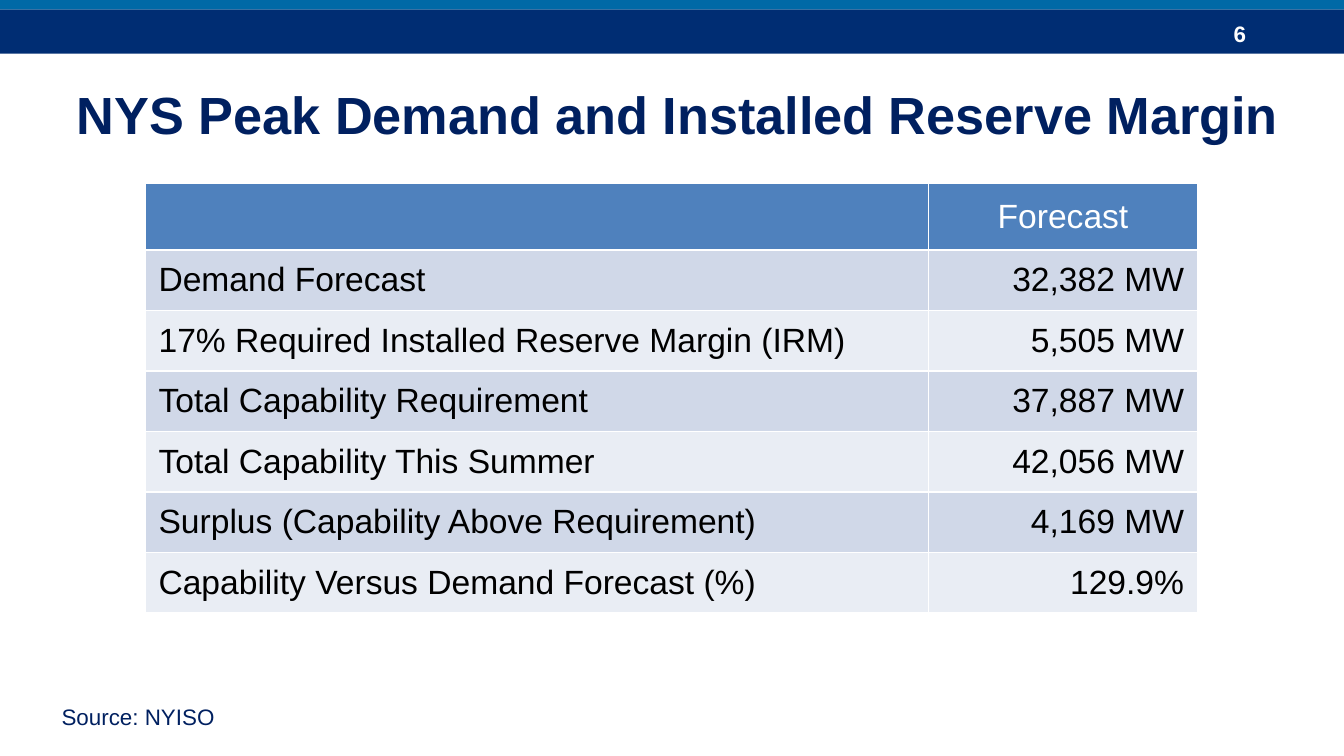
from lxml import etree
from pptx import Presentation, util as u
from pptx.dml.color import RGBColor
from pptx.enum import shapes, text
from pptx.oxml.ns import qn

INK = {"navy": "002D73", "blue": "0069A6", "title": "002060", "head": "4F81BD",
       "odd": "D0D8E8", "even": "E9EDF4", "white": "FFFFFF", "black": "000000"}
LEFT, MID, RIGHT = text.PP_ALIGN.LEFT, text.PP_ALIGN.CENTER, text.PP_ALIGN.RIGHT


def write(frame, words, size=18, ink="black", bold=False, align=LEFT):
    para = frame.paragraphs[0]
    para.alignment = align
    run = para.add_run()
    run.text = words
    font = run.font
    font.name, font.size, font.bold = "Arial", u.Pt(size), bold
    font.color.rgb = RGBColor.from_string(INK[ink])


def edge(cell, side):
    line = etree.SubElement(cell._tc.get_or_add_tcPr(), qn("a:" + side), w=str(u.Pt(1)))
    fill = etree.SubElement(line, qn("a:solidFill"))
    etree.SubElement(fill, qn("a:srgbClr"), val=INK["white"])


deck = Presentation()
deck.slide_width = u.Inches(10)
deck.slide_height = deck.slide_width * 9 // 16
slide = deck.slides.add_slide(deck.slide_layouts[6])

for top, high, ink in [(0.07, 0.33, "navy"), (-0.02, 0.09, "blue")]:
    bar = slide.shapes.add_shape(shapes.MSO_SHAPE.RECTANGLE, 0, u.Inches(top),
                                 deck.slide_width, u.Inches(high))
    bar.shadow.inherit = False
    bar.fill.solid()
    bar.fill.fore_color.rgb = RGBColor.from_string(INK[ink])
    bar.line.fill.background()

labels = [
    ((9.08, 0.1, 0.75, 0.3), "6", True, "MIDDLE",
     dict(size=12, ink="white", bold=True)),
    ((0.25, 0.56, 9.58, 0.77), "NYS Peak Demand and Installed Reserve Margin", True, "TOP",
     dict(size=28, ink="title", bold=True, align=MID)),
    ((0.36, 5.18, 1.35, 0.3), "Source: NYISO", False, "TOP",
     dict(size=12, ink="title")),
]
for place, words, wrap, anchor, style in labels:
    frame = slide.shapes.add_textbox(*map(u.Inches, place)).text_frame
    frame.word_wrap = wrap
    frame.vertical_anchor = text.MSO_ANCHOR[anchor]
    write(frame, words, **style)

rows = [
    ("", "Forecast"),
    ("Demand Forecast", "32,382 MW"),
    ("17% Required Installed Reserve Margin (IRM)", "5,505 MW"),
    ("Total Capability Requirement", "37,887 MW"),
    ("Total Capability This Summer", "42,056 MW"),
    ("Surplus (Capability Above Requirement)", "4,169 MW"),
    ("Capability Versus Demand Forecast (%)", "129.9%"),
]
grid = slide.shapes.add_table(len(rows), 2, u.Inches(1.08), u.Inches(1.36),
                              u.Inches(7.83), u.Inches(3.2)).table
for col, wide in zip(grid.columns, (5.83, 2)):
    col.width = u.Inches(wide)

for r, row in enumerate(rows):
    head = r == 0
    grid.rows[r].height = u.Inches(0.5 if head else 0.45)
    for c, words in enumerate(row):
        cell = grid.cell(r, c)
        cell.vertical_anchor = text.MSO_ANCHOR.MIDDLE
        cell.margin_left = cell.margin_right = u.Inches(0.1)
        cell.margin_top = cell.margin_bottom = u.Inches(0.04)
        for side in ("lnL", "lnR", "lnT", "lnB"):
            edge(cell, side)
        cell.fill.solid()
        cell.fill.fore_color.rgb = RGBColor.from_string(
            INK["head" if head else "odd" if r % 2 else "even"])
        if words:
            write(cell.text_frame, words, ink="white" if head else "black",
                  align=MID if head else RIGHT if c else LEFT)

deck.save("out.pptx")
